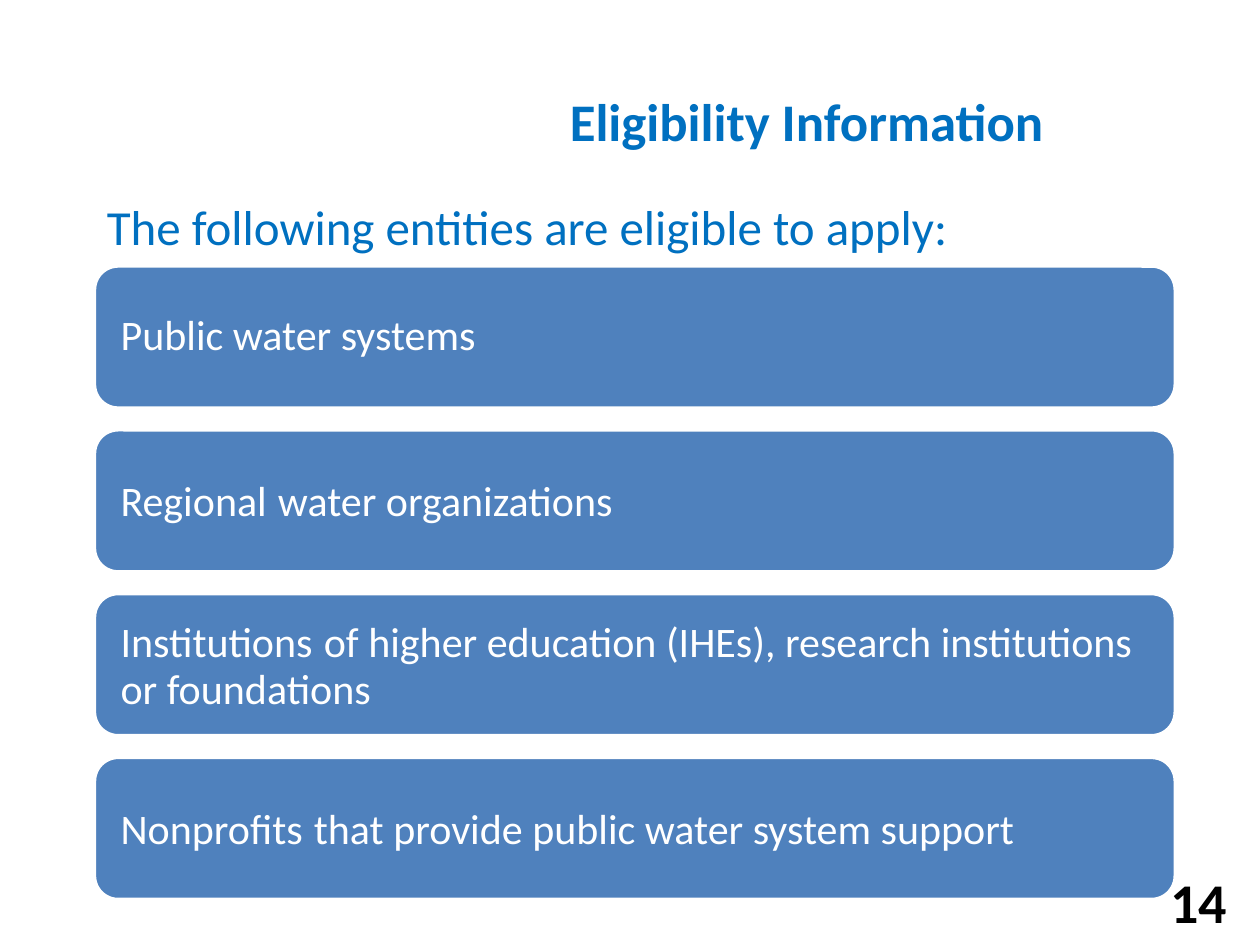
import dataclasses
import pptx
import pptx.dml.color
import pptx.enum.shapes
import pptx.enum.text
import pptx.util

Pt = pptx.util.Pt
Rgb = pptx.dml.color.RGBColor
Align = pptx.enum.text.PP_ALIGN
Anchor = pptx.enum.text.MSO_ANCHOR


@dataclasses.dataclass(frozen=True)
class Theme:
    font: str = "Calibri"
    blue: str = "0070C0"
    fill: str = "4F81BD"
    white: str = "FFFFFF"
    black: str = "000000"
    title: float = 30.2
    lead: float = 28
    item: float = 24
    number: float = 32


@dataclasses.dataclass(frozen=True)
class Box:
    left: float
    top: float
    width: float
    height: float

    def spot(self) -> tuple:
        return tuple(Pt(n) for n in dataclasses.astuple(self))


@dataclasses.dataclass(frozen=True)
class Item:
    head: str
    tail: str = ""


THEME = Theme()
ITEMS = [
    Item("Public water systems"),
    Item("Regional", "water organizations"),
    Item("Institutions", "of higher education (IHEs), research institutions or foundations"),
    Item("Nonprofits", "that provide public water system support"),
]
FIRST = Box(54, 152, 617.6, 81.2)
STEP = 93.6


def write(shape, *parts: tuple, color: str, bold: bool = False, align=Align.LEFT,
          anchor=Anchor.MIDDLE, inset: float = 7.2, line: float = 1.0) -> None:
    frame = shape.text_frame
    frame.word_wrap = True
    frame.auto_size = pptx.enum.text.MSO_AUTO_SIZE.NONE
    frame.vertical_anchor = anchor
    frame.margin_left = frame.margin_right = Pt(inset)
    frame.margin_top = frame.margin_bottom = Pt(3.6)
    para = frame.paragraphs[0]
    para.alignment = align
    para.line_spacing = line
    for text, size in parts:
        run = para.add_run()
        run.text = text
        run.font.name = THEME.font
        run.font.size = Pt(size)
        run.font.bold = bold
        run.font.color.rgb = Rgb.from_string(color)


def draw(slide, item: Item, box: Box) -> None:
    card = slide.shapes.add_shape(
        pptx.enum.shapes.MSO_SHAPE.ROUNDED_RECTANGLE, *box.spot())
    card.shadow.inherit = False
    card.fill.solid()
    card.fill.fore_color.rgb = Rgb.from_string(THEME.fill)
    card.line.color.rgb = Rgb.from_string(THEME.white)
    card.line.width = Pt(2)
    parts = [(item.head, THEME.item)]
    if item.tail:
        parts += [(" ", THEME.lead), (item.tail, THEME.item)]
    write(card, *parts, color=THEME.white, inset=11, line=0.9)


def main() -> None:
    deck = pptx.Presentation()
    deck.slide_width, deck.slide_height = Pt(720), Pt(540)
    slide = deck.slides.add_slide(deck.slide_layouts.get_by_name("Title Only"))

    title = slide.shapes.title
    title.left, title.top, title.width, title.height = Box(233.3, 41.8, 455.8, 54).spot()
    write(title, ("Eligibility Information", THEME.title),
          color=THEME.blue, bold=True, align=Align.CENTER)

    lead = slide.shapes.add_textbox(*Box(54, 108.7, 612, 41).spot())
    write(lead, ("The following entities are eligible to apply:", THEME.lead),
          color=THEME.blue, anchor=Anchor.TOP)

    for index, item in enumerate(ITEMS):
        draw(slide, item, dataclasses.replace(FIRST, top=FIRST.top + index * STEP))

    number = slide.shapes.add_textbox(*Box(516.2, 500.4, 192.2, 28.8).spot())
    write(number, ("14", THEME.number), color=THEME.black, bold=True, align=Align.RIGHT)

    deck.save("out.pptx")


if __name__ == "__main__":
    main()
